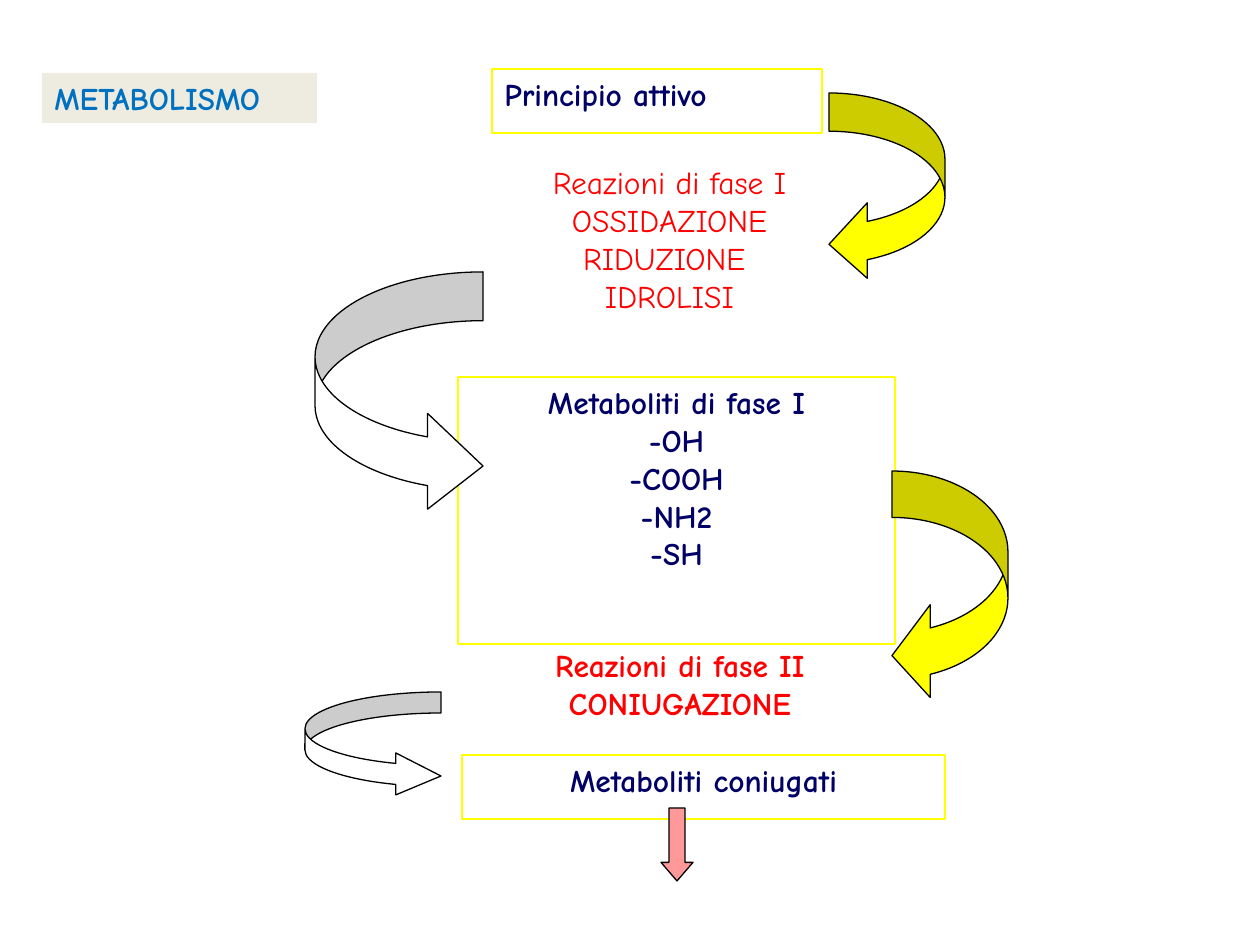
import pptx
import pptx.dml.color
import pptx.enum.shapes
import pptx.enum.text
import pptx.util

SHAPE = pptx.enum.shapes.MSO_SHAPE
ALIGN = pptx.enum.text.PP_ALIGN
FONT = "Comic Neue"
TEXT_SIZE = 18
LINE_WIDTH = 0.75
COLORS = {
    "white": "FFFFFF", "black": "000000", "beige": "EEECE1", "blue": "0070C0",
    "navy": "000066", "red": "FF0000", "yellow": "FFFF00", "pink": "FF9999",
}

LABELS = [
    {"at": (42, 73, 275, 50), "lines": ["METABOLISMO"], "color": "blue",
     "fill": "beige", "align": ALIGN.LEFT},
    {"at": (492, 69, 330, 64), "lines": ["Principio attivo"], "color": "navy",
     "line": "yellow", "align": ALIGN.LEFT},
    {"at": (483, 157, 373, 217), "color": "red", "bold": False,
     "lines": ["Reazioni di fase I", "OSSIDAZIONE", "RIDUZIONE ", "IDROLISI"]},
    {"at": (458, 377, 437, 267), "color": "navy", "line": "yellow",
     "lines": ["Metaboliti di fase I", "-OH", "-COOH", "-NH2", "-SH"]},
    {"at": (471, 640, 418, 115), "color": "red",
     "lines": ["Reazioni di fase II", "CONIUGAZIONE"]},
    {"at": (462, 755, 483, 64), "lines": ["Metaboliti coniugati"],
     "color": "navy", "line": "yellow"},
]

ARROWS = [
    (SHAPE.CURVED_LEFT_ARROW, (829, 93, 116, 189), (0.33, 0.65, 0.33), "yellow"),
    (SHAPE.CURVED_RIGHT_ARROW, (315, 272, 168, 242), (0.29, 0.57, 0.33), "white"),
    (SHAPE.CURVED_LEFT_ARROW, (892, 471, 116, 231), (0.4, 0.8, 0.33), "yellow"),
    (SHAPE.CURVED_RIGHT_ARROW, (305, 692, 136, 105), (0.2, 0.4, 0.43), "white"),
    (SHAPE.DOWN_ARROW, (661, 808, 32, 73), (0.5, 0.58), "pink"),
]


def px(length):
    return round(length * 914400 / 126)


def rgb(name):
    return pptx.dml.color.RGBColor.from_string(COLORS[name])


def paint(shape, fill, line):
    shape.shadow.inherit = False
    if fill:
        shape.fill.solid()
        shape.fill.fore_color.rgb = rgb(fill)
    else:
        shape.fill.background()
    if line:
        shape.line.color.rgb = rgb(line)
        shape.line.width = pptx.util.Pt(LINE_WIDTH)
    else:
        shape.line.fill.background()


def add_label(page, label):
    place = map(px, label["at"])
    if "fill" in label or "line" in label:
        box = page.shapes.add_shape(SHAPE.RECTANGLE, *place)
        paint(box, label.get("fill"), label.get("line"))
    else:
        box = page.shapes.add_textbox(*place)
    frame = box.text_frame
    frame.word_wrap = True
    frame.vertical_anchor = pptx.enum.text.MSO_ANCHOR.TOP
    for index, text in enumerate(label["lines"]):
        para = frame.add_paragraph() if index else frame.paragraphs[0]
        para.alignment = label.get("align", ALIGN.CENTER)
        span = para.add_run()
        span.text = text
        span.font.name = FONT
        span.font.size = pptx.util.Pt(TEXT_SIZE)
        span.font.bold = label.get("bold", True)
        span.font.color.rgb = rgb(label["color"])


def add_arrow(page, kind, place, adjustments, fill):
    arrow = page.shapes.add_shape(kind, *map(px, place))
    for index, value in enumerate(adjustments):
        arrow.adjustments[index] = value
    paint(arrow, fill, "black")


def main():
    deck = pptx.Presentation()
    deck.slide_width = px(1260)
    deck.slide_height = px(945)
    page = deck.slides.add_slide(deck.slide_layouts[6])
    for label in LABELS:
        add_label(page, label)
    for arrow in ARROWS:
        add_arrow(page, *arrow)
    deck.save("out.pptx")


if __name__ == "__main__":
    main()
